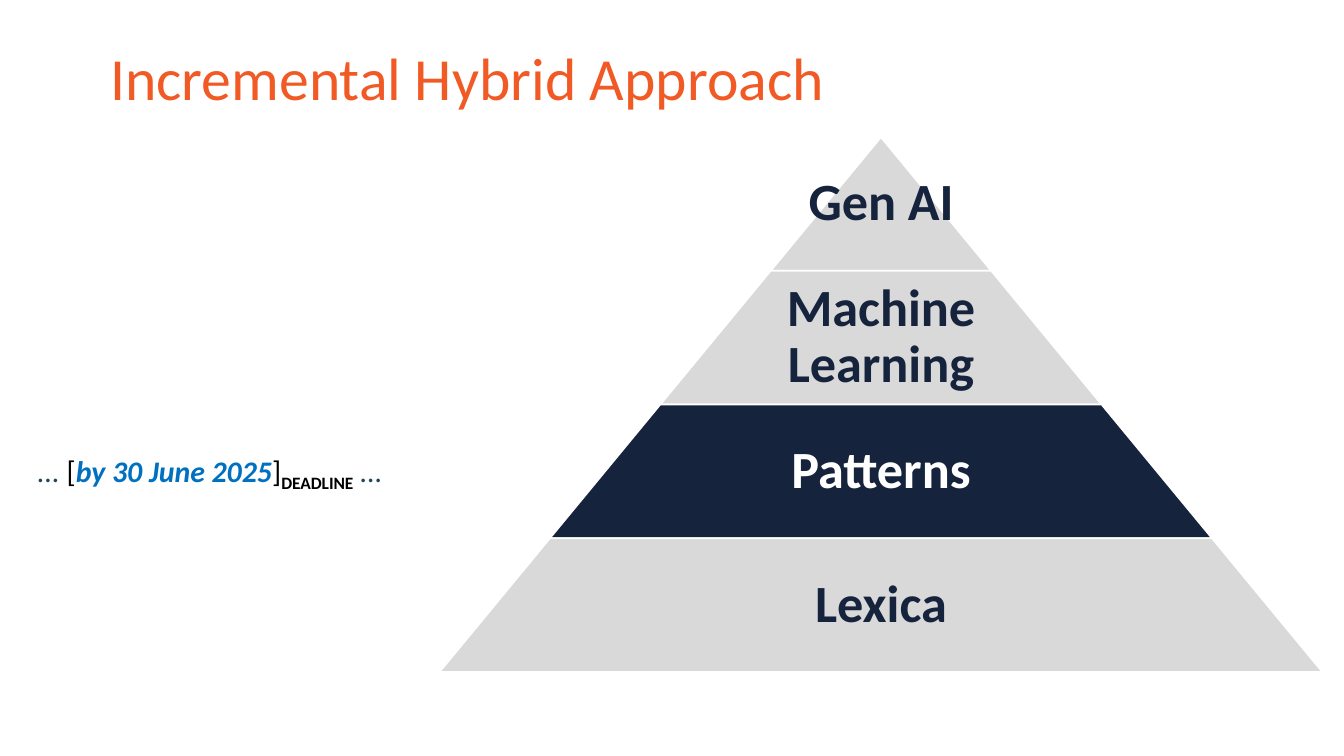
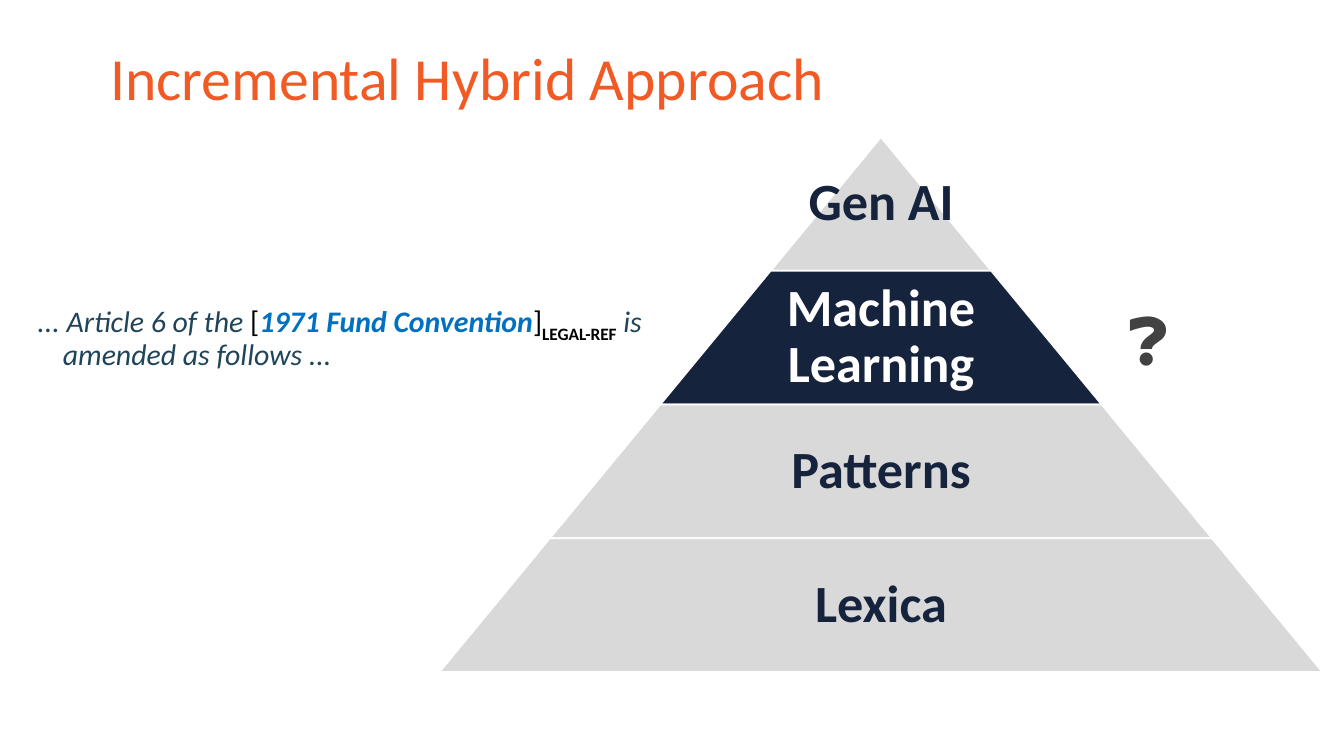
from pptx import Presentation
from pptx.dml.color import RGBColor
from pptx.enum.shapes import MSO_SHAPE
from pptx.enum.text import MSO_ANCHOR, PP_ALIGN
from pptx.util import Inches, Pt

WIDE = 10
HIGH = WIDE * 9 / 16
COLORS = {"title": "F15A24", "navy": "16233C", "grey": "D9D9D9", "white": "FFFFFF",
          "note": "20455A", "black": "000000", "blue": "0070C0", "mark": "424242"}
FONT = "Calibri"
TITLE = "Incremental Hybrid Approach"
TITLE_BOX = (0.72, 0.06, 8.61, 1.09)
PYRAMID = (3.27, 1.02, 6.57, 3.98)
LEVELS = ["Gen AI", "Machine Learning", "Patterns", "Lexica"]
NOTE_LEFT = 0.18
HANG = 0.19

# Run styles of a note: colour, bold, italic, baseline shift
STYLES = {"plain": ("note", False, True, 0), "bracket": ("black", False, False, 0),
          "entity": ("blue", True, True, 0), "tag": ("black", True, False, -25000)}


def rgb(name):
    return RGBColor.from_string(COLORS[name])


def style(font, size, color, bold=False, italic=False, face=FONT):
    font.name, font.size = face, Pt(size)
    font.bold, font.italic = bold, italic
    font.color.rgb = rgb(color)


def indent(para, left, first):
    para.level = 1
    props = para._p.get_or_add_pPr()
    props.set("marL", str(Inches(left)))
    props.set("indent", str(Inches(first)))


def add_text(slide, box, inset, anchor=MSO_ANCHOR.MIDDLE):
    frame = slide.shapes.add_textbox(*map(Inches, box)).text_frame
    frame.word_wrap = True
    frame.vertical_anchor = anchor
    frame.margin_left = frame.margin_right = Inches(inset)
    frame.margin_top = frame.margin_bottom = Inches(inset)
    return frame


def add_title(slide, box):
    title = slide.shapes.title
    title.left, title.top, title.width, title.height = map(Inches, box)
    frame = title.text_frame
    frame.text = TITLE
    frame.vertical_anchor = MSO_ANCHOR.MIDDLE
    para = frame.paragraphs[0]
    para.alignment, para.line_spacing = PP_ALIGN.LEFT, 0.9
    style(para.runs[0].font, 32, "title")


def tier_box(box, row):
    """Box of one pyramid tier, counted from the apex."""
    left, top, width, height = box
    count = len(LEVELS)
    tier = width * (row + 1) / count
    return left + (width - tier) / 2, top + height * row / count, tier, height / count


def add_tier(slide, box, label, share, active):
    """Draw one tier; its label takes the given share of the tier's width."""
    left, top, width, height = box
    shape = slide.shapes.add_shape(MSO_SHAPE.TRAPEZOID, *map(Inches, box))
    shape.adjustments[0] = PYRAMID[2] / len(LEVELS) / 2 / height
    shape.shadow.inherit = False
    shape.fill.solid()
    shape.fill.fore_color.rgb = rgb("navy" if active else "grey")
    shape.line.color.rgb = rgb("white")
    shape.line.width = Pt(1)

    inner = (left + width * (1 - share) / 2, top, width * share, height)
    frame = add_text(slide, inner, 0.04)
    frame.text = label
    para = frame.paragraphs[0]
    para.alignment, para.line_spacing = PP_ALIGN.CENTER, 0.9
    style(para.runs[0].font, 28, "white" if active else "navy", bold=True)


def add_pyramid(slide, box, active):
    for row, label in enumerate(LEVELS):
        share = 0.65 if row else 1
        add_tier(slide, tier_box(box, row), label, share, row == active)


def add_note(slide, box, parts):
    para = add_text(slide, box, 0.1).paragraphs[0]
    para.line_spacing = 0.9
    indent(para, HANG, -HANG)
    for text, kind in parts:
        color, bold, italic, shift = STYLES[kind]
        run = para.add_run()
        run.text = text
        style(run.font, 16, color, bold, italic)
        if shift:
            run._r.get_or_add_rPr().set("baseline", str(shift))


def add_mark(slide, box):
    frame = add_text(slide, box, 0.1, MSO_ANCHOR.TOP)
    frame.margin_top = frame.margin_bottom = Inches(0.05)
    frame.text = "❓"
    para = frame.paragraphs[0]
    indent(para, 0.5, 0)
    style(para.runs[0].font, 32, "mark", face="Roboto")


def add_slide(deck, active, parts):
    """Add a slide with one tier lit and a note that fills the space to its left."""
    slide = deck.slides.add_slide(deck.slide_layouts[5])
    add_title(slide, TITLE_BOX)
    add_pyramid(slide, PYRAMID, active)
    left, top, _, height = tier_box(PYRAMID, active)
    add_note(slide, (NOTE_LEFT, top, left - NOTE_LEFT, height), parts)
    return slide


def main():
    deck = Presentation()
    deck.slide_width, deck.slide_height = Inches(WIDE), Inches(HIGH)
    add_slide(deck, LEVELS.index("Patterns"), [
        ("... ", "plain"), ("[", "bracket"), ("by 30 June 2025", "entity"),
        ("]", "bracket"), ("DEADLINE", "tag"), (" ...", "plain")])
    slide = add_slide(deck, LEVELS.index("Machine Learning"), [
        ("... Article 6 of the ", "plain"), ("[", "bracket"),
        ("1971 Fund Convention", "entity"), ("]", "bracket"),
        ("LEGAL-REF", "tag"), (" is amended as follows ...", "plain")])
    add_mark(slide, (7.79, 2.18, 0.34, 0.64))
    deck.save("out.pptx")


if __name__ == "__main__":
    main()
